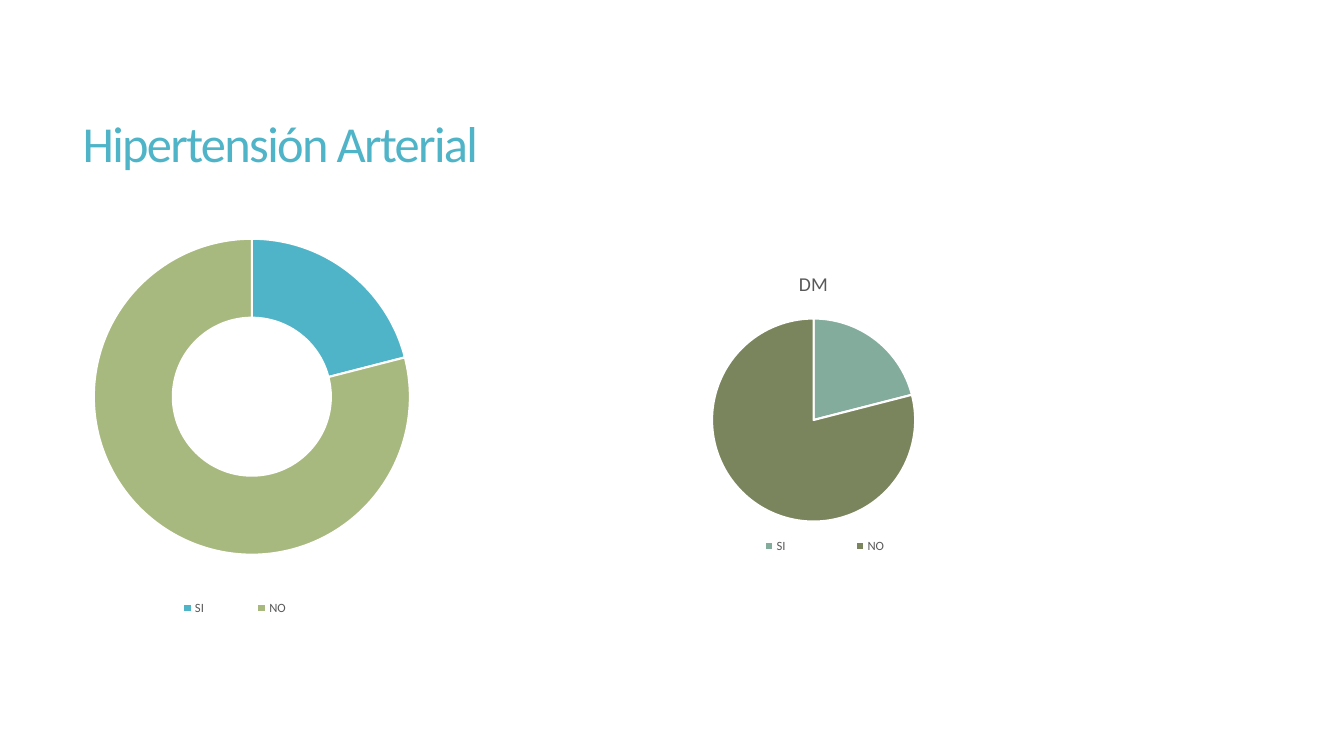
from dataclasses import dataclass

from lxml import etree
from pptx import Presentation
from pptx.chart.data import CategoryChartData
from pptx.dml.color import RGBColor
from pptx.enum.chart import XL_CHART_TYPE, XL_LEGEND_POSITION
from pptx.enum.text import MSO_ANCHOR
from pptx.oxml.ns import qn
from pptx.util import Emu, Pt

DOUGHNUT = XL_CHART_TYPE.DOUGHNUT
PIE = XL_CHART_TYPE.PIE
BOTTOM = XL_LEGEND_POSITION.BOTTOM
MIDDLE = MSO_ANCHOR.MIDDLE

FONT = "Calibri"
TEAL, GREY, WHITE = "50B4C8", "595959", "FFFFFF"
CATEGORIES = ("SI", "NO")
VALUES = (21, 79)

Box = tuple[int, int, int, int]
Fractions = tuple[float, ...]


@dataclass(frozen=True)
class RoundChart:
    kind: int
    box: Box
    colors: tuple[str, str]
    plot: Fractions
    legend: Fractions
    title: str = ""
    hole: int = 0


CHARTS = (
    RoundChart(DOUGHNUT, (74, 220, 1176, 412), (TEAL, "A8B97F"),
               plot=(0.016, 0.041, 0.267, 0.761),
               legend=(0.05, 0.89, 0.17, 0.08), hole=75),
    RoundChart(PIE, (588, 253, 438, 309), ("84AC9D", "7A855D"),
               plot=(0.27, 0.2, 0.46, 0.66),
               legend=(0.24, 0.89, 0.57, 0.09), title="DM"),
)


def px(n: int) -> Emu:
    """Convert px, at 100 to the inch, into EMU."""
    return Emu(n * 9144)


def rgb(value: str) -> RGBColor:
    return RGBColor.from_string(value)


def set_font(font, *, size: float, color: str) -> None:
    font.name = FONT
    font.size = Pt(size)
    font.bold = False
    font.color.rgb = rgb(color)


def add_text(s, text: str, box: Box, *, size: float, color: str,
             line_spacing: float = 1.0, tracking: float = 0) -> None:
    tf = s.shapes.add_textbox(*map(px, box)).text_frame
    tf.word_wrap = True
    tf.vertical_anchor = MIDDLE
    p = tf.paragraphs[0]
    p.line_spacing = line_spacing
    r = p.add_run()
    r.text = text
    set_font(r.font, size=size, color=color)
    r.font._element.set("spc", str(round(tracking * 100)))


def set_layout(parent, index: int, area: Fractions, inner: bool = False) -> None:
    """Place a chart part by fractions of the chart area."""
    for old in parent.findall(qn("c:layout")):
        parent.remove(old)
    layout = etree.Element(qn("c:layout"))
    manual = etree.SubElement(layout, qn("c:manualLayout"))
    settings = [("layoutTarget", "inner")] if inner else []
    settings += [("xMode", "edge"), ("yMode", "edge")]
    settings += [(tag, str(v)) for tag, v in zip("xywh", area)]
    for tag, value in settings:
        etree.SubElement(manual, qn(f"c:{tag}")).set("val", value)
    parent.insert(index, layout)


def add_round_chart(s, item: RoundChart) -> None:
    data = CategoryChartData()
    data.categories = CATEGORIES
    data.add_series("Series 1", VALUES)
    chart = s.shapes.add_chart(item.kind, *map(px, item.box), data).chart
    set_font(chart.font, size=10, color="000000")

    # Title
    chart.has_title = bool(item.title)
    if item.title:
        tf = chart.chart_title.text_frame
        tf.text = item.title
        set_font(tf.paragraphs[0].runs[0].font, size=14, color=GREY)

    # Legend
    chart.has_legend = True
    legend = chart.legend
    legend.position = BOTTOM
    legend.include_in_layout = False
    set_font(legend.font, size=9, color=GREY)
    set_layout(legend._element, 1, item.legend)

    # Slices
    plot = chart.plots[0]
    plot.vary_by_categories = True
    for i, color in enumerate(item.colors):
        fmt = plot.series[0].points[i].format
        fmt.fill.solid()
        fmt.fill.fore_color.rgb = rgb(color)
        fmt.line.color.rgb = rgb(WHITE)
        fmt.line.width = Pt(1.5)
    if item.hole:
        plot._element.find(qn("c:holeSize")).set("val", str(item.hole))
    set_layout(plot._element.getparent(), 0, item.plot, inner=True)


def main() -> None:
    prs = Presentation()
    prs.slide_width, prs.slide_height = px(1333), px(750)
    s = prs.slides.add_slide(prs.slide_layouts[6])

    # Heading
    add_text(s, "Hipertensión Arterial", (72, 55, 1178, 181), size=36,
             color=TEAL, line_spacing=0.85, tracking=-1.2)

    # Charts
    for item in CHARTS:
        add_round_chart(s, item)

    prs.save("out.pptx")


if __name__ == "__main__":
    main()
